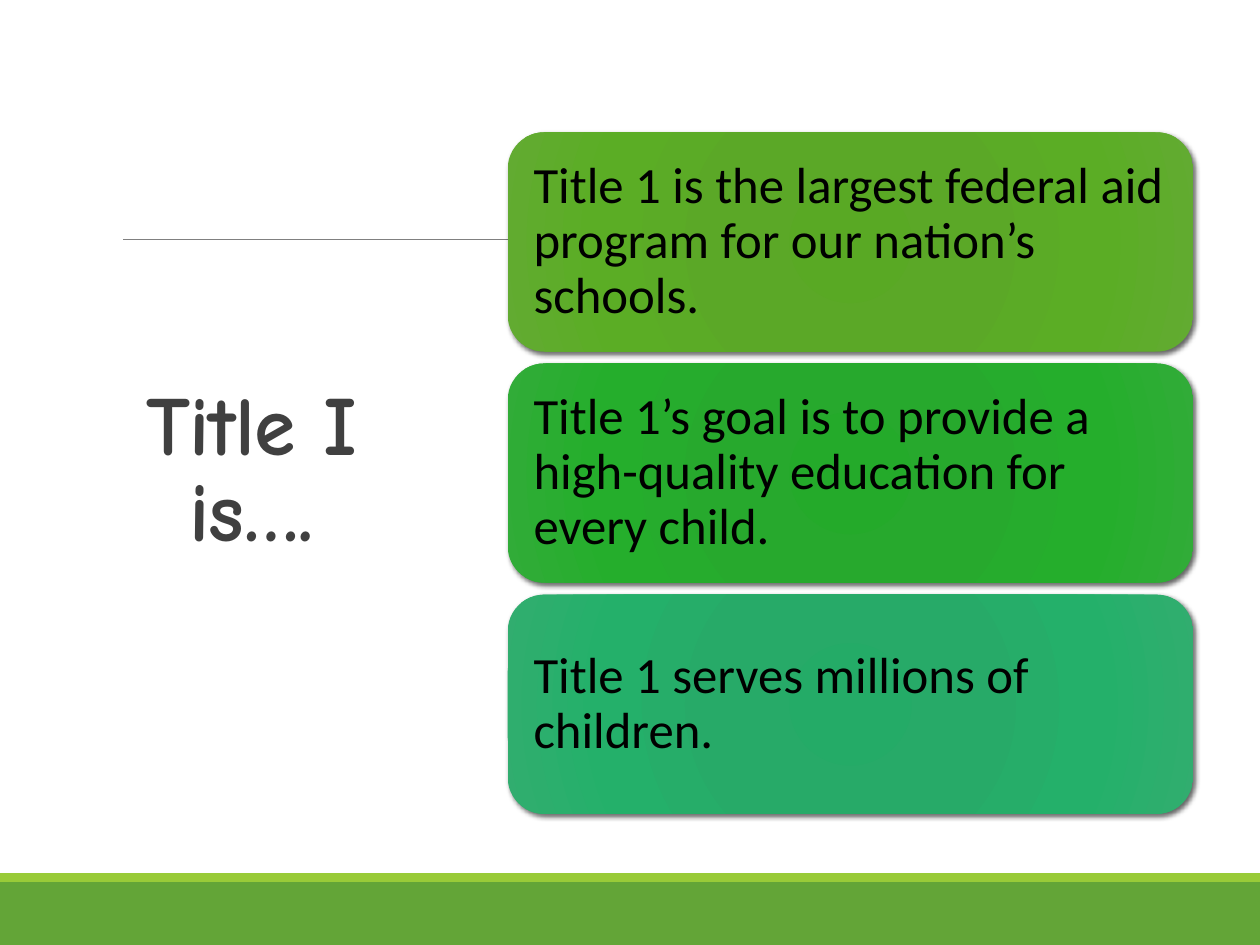
from dataclasses import dataclass

from lxml.etree import SubElement
from pptx import Presentation
from pptx.dml.color import RGBColor
from pptx.enum.shapes import MSO_CONNECTOR, MSO_SHAPE
from pptx.enum.text import MSO_ANCHOR, MSO_AUTO_SIZE, PP_ALIGN
from pptx.oxml import parse_xml
from pptx.oxml.ns import nsdecls, qn
from pptx.util import Inches, Pt

WIDTH, HEIGHT = 10, 7.5
CARD_LEFT, CARD_TOP = 4.03, 1.05
CARD_WIDTH, CARD_HEIGHT, CARD_PITCH = 5.44, 1.74, 1.835
STOPS = (0, 34, 70, 100)


@dataclass
class Band:
    top: float
    height: float
    color: str


@dataclass
class Card:
    text: str
    shades: tuple[str, ...]


BANDS = [Band(7, 0.5, "63A537"), Band(6.93, 0.07, "99CB38")]
CARDS = [
    Card("Title 1 is the largest federal aid program for our nation’s schools.",
         ("59A924", "5BA827", "5BAD25", "62AB31")),
    Card("Title 1’s goal is to provide a high-quality education for every child.",
         ("24AA2A", "27A92D", "25AE2C", "31AC38")),
    Card("Title 1 serves millions of children.",
         ("24AB67", "27AA68", "24B06A", "31AD6F")),
]


def rgb(color: str) -> RGBColor:
    return RGBColor.from_string(color)


def add_run(p, text: str, font: str, size: float, color: str, bold: bool = False):
    r = p.add_run()
    r.text = text
    r.font.name, r.font.size, r.font.bold = font, Pt(size), bold
    r.font.color.rgb = rgb(color)
    return r


def draw_band(s, band: Band) -> None:
    sp = s.shapes.add_shape(MSO_SHAPE.RECTANGLE, 0, Inches(band.top),
                            Inches(WIDTH), Inches(band.height))
    sp.shadow.inherit = False
    sp.fill.solid()
    sp.fill.fore_color.rgb = rgb(band.color)
    sp.line.fill.background()


def draw_rule(s, left: float, right: float, y: float) -> None:
    line = s.shapes.add_connector(MSO_CONNECTOR.STRAIGHT, Inches(left), Inches(y),
                                  Inches(right), Inches(y))
    line.line.color.rgb = rgb("808080")
    line.line.width = Pt(0.5)
    SubElement(line._element.spPr, qn("a:effectLst"))


def style_card(sp, shades: tuple[str, ...]) -> None:
    """Give the card a radial gradient, no outline and a soft shadow."""
    stops = "".join(f'<a:gs pos="{pos * 1000}"><a:srgbClr val="{shade}"/></a:gs>'
                    for pos, shade in zip(STOPS, shades))
    sp._element.spPr.append(parse_xml(
        f'<a:gradFill {nsdecls("a")} rotWithShape="1"><a:gsLst>{stops}</a:gsLst>'
        '<a:path path="circle"><a:fillToRect l="100000" t="100000" r="100000" b="100000"/>'
        '</a:path></a:gradFill>'))
    sp.line.fill.background()
    sp._element.spPr.append(parse_xml(
        f'<a:effectLst {nsdecls("a")}><a:outerShdw blurRad="{Pt(3)}" dist="{Pt(2)}" '
        'dir="2700000" rotWithShape="0"><a:srgbClr val="000000"><a:alpha val="60000"/>'
        '</a:srgbClr></a:outerShdw></a:effectLst>'))


def draw_card(s, row: int, card: Card) -> None:
    sp = s.shapes.add_shape(MSO_SHAPE.ROUNDED_RECTANGLE, Inches(CARD_LEFT),
                            Inches(CARD_TOP + row * CARD_PITCH),
                            Inches(CARD_WIDTH), Inches(CARD_HEIGHT))
    style_card(sp, card.shades)
    tf = sp.text_frame
    tf.word_wrap = True
    tf.vertical_anchor = MSO_ANCHOR.MIDDLE
    tf.margin_left = tf.margin_right = tf.margin_top = tf.margin_bottom = Inches(0.12)
    p = tf.paragraphs[0]
    p.alignment = PP_ALIGN.LEFT
    p.line_spacing = 0.9
    add_run(p, card.text, "Calibri", 29, "000000")


def set_title(s, text: str) -> None:
    sp = s.shapes.title
    sp.left, sp.top, sp.width, sp.height = map(Inches, (0.54, 1.51, 2.91, 4.48))
    tf = sp.text_frame
    tf.word_wrap = True
    tf.auto_size = MSO_AUTO_SIZE.NONE
    tf.vertical_anchor = MSO_ANCHOR.MIDDLE
    p = tf.paragraphs[0]
    p.alignment = PP_ALIGN.CENTER
    p.line_spacing = 0.85
    r = add_run(p, text, "Comic Neue", 48, "404040", bold=True)
    r.font._element.set("spc", "-50")


def main() -> None:
    prs = Presentation()
    prs.slide_width, prs.slide_height = Inches(WIDTH), Inches(HEIGHT)
    s = prs.slides.add_slide(prs.slide_layouts[5])
    for band in BANDS:
        draw_band(s, band)
    draw_rule(s, 0.98, 9.15, 1.9)
    set_title(s, "Title I is….")
    for row, card in enumerate(CARDS):
        draw_card(s, row, card)
    prs.save("out.pptx")


if __name__ == "__main__":
    main()
